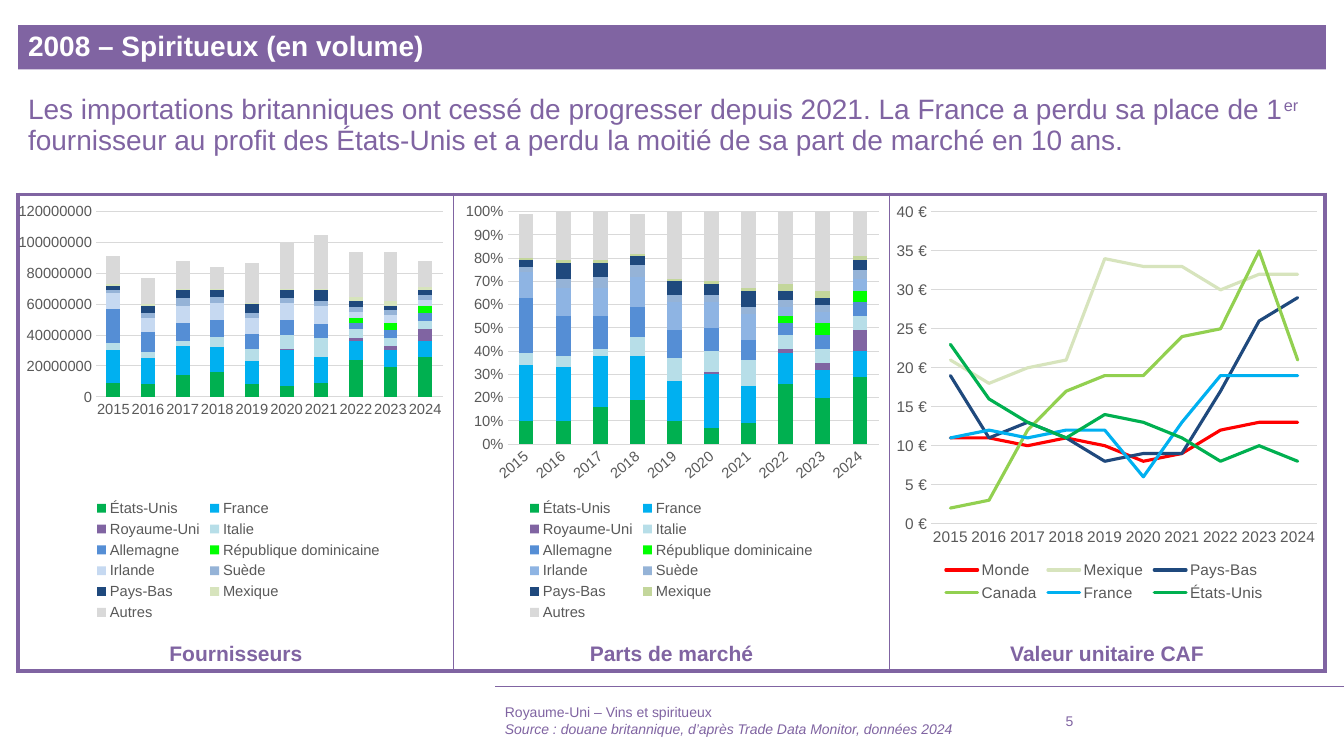
"""Build the slide on British spirits imports: three charts in a framed table."""
from lxml import etree
from pptx import Presentation
from pptx.chart.data import CategoryChartData
from pptx.dml.color import RGBColor
from pptx.enum.chart import XL_CHART_TYPE, XL_LEGEND_POSITION, XL_TICK_MARK
from pptx.enum.shapes import MSO_CONNECTOR, MSO_SHAPE
from pptx.enum.text import MSO_ANCHOR, PP_ALIGN
from pptx.oxml import parse_xml
from pptx.oxml.ns import nsdecls, qn
from pptx.util import Inches, Pt

STACKED, LINE = XL_CHART_TYPE.COLUMN_STACKED, XL_CHART_TYPE.LINE
BOTTOM, NO_TICK = XL_LEGEND_POSITION.BOTTOM, XL_TICK_MARK.NONE
TOP, MIDDLE = MSO_ANCHOR.TOP, MSO_ANCHOR.MIDDLE
LEFT, CENTER = PP_ALIGN.LEFT, PP_ALIGN.CENTER
AUTO_TURN = -1000
COLORS = {
    "purple": "8064A2", "white": "FFFFFF", "text": "595959", "grid": "D9D9D9",
    "green": "00B050", "blue": "00B0F0", "ice": "B7DEE8", "azure": "558ED5",
    "neon": "00FF00", "pale": "C6D9F1", "sky": "8EB4E3", "steel": "95B3D7",
    "navy": "1F497D", "sand": "D7E4BD", "olive": "C3D69B", "red": "FF0000", "lime": "92D050",
}
YEARS = [str(year) for year in range(2015, 2025)]
SUPPLIERS = ["États-Unis", "France", "Royaume-Uni", "Italie", "Allemagne", "République dominicaine",
             "Irlande", "Suède", "Pays-Bas", "Mexique", "Autres"]
SUPPLIER_COLORS = ["green", "blue", "purple", "ice", "azure", "neon",
                   "pale", "steel", "navy", "sand", "grid"]
SHARE_COLORS = ["green", "blue", "purple", "ice", "azure", "neon",
                "sky", "steel", "navy", "olive", "grid"]
VOLUMES_IN_MILLIONS = [
    [9, 8, 14, 16, 8, 7, 9, 24, 19, 26],
    [21, 17, 19, 16, 15, 23, 17, 12, 11, 10],
    [0, 0, 0, 0, 0, 1, 0, 2, 3, 8],
    [5, 4, 3, 7, 8, 9, 12, 6, 5, 5],
    [22, 13, 12, 11, 10, 10, 9, 4, 5, 5],
    [0, 0, 0, 0, 0, 0, 0, 3, 5, 5],
    [10, 9, 11, 11, 10, 11, 12, 4, 5, 4],
    [2, 3, 5, 4, 3, 3, 3, 3, 3, 3],
    [3, 5, 5, 4, 6, 5, 7, 4, 3, 3],
    [1, 1, 1, 1, 1, 1, 1, 3, 3, 2],
    [18, 17, 18, 14, 26, 30, 35, 29, 32, 17],
]
SHARES_IN_PERCENT = [
    [10, 10, 16, 19, 10, 7, 9, 26, 20, 29],
    [24, 23, 22, 19, 17, 23, 16, 13, 12, 11],
    [0, 0, 0, 0, 0, 1, 0, 2, 3, 9],
    [5, 5, 3, 8, 10, 9, 11, 6, 6, 6],
    [24, 17, 14, 13, 12, 10, 9, 5, 6, 6],
    [0, 0, 0, 0, 0, 0, 0, 3, 5, 5],
    [11, 12, 12, 13, 12, 11, 11, 4, 5, 5],
    [2, 4, 5, 5, 3, 3, 3, 3, 3, 4],
    [3, 7, 6, 4, 6, 5, 7, 4, 3, 4],
    [1, 1, 1, 1, 1, 1, 1, 3, 3, 2],
    [19, 22, 21, 17, 29, 31, 33, 31, 34, 19],
]
UNIT_VALUES = [
    [11, 11, 10, 11, 10, 8, 9, 12, 13, 13],
    [21, 18, 20, 21, 34, 33, 33, 30, 32, 32],
    [19, 11, 13, 11, 8, 9, 9, 17, 26, 29],
    [2, 3, 12, 17, 19, 19, 24, 25, 35, 21],
    [11, 12, 11, 12, 12, 6, 13, 19, 19, 19],
    [23, 16, 13, 11, 14, 13, 11, 8, 10, 8],
]
CHARTS = [
    {"type": STACKED, "at": (0.17, 1.93, 4.35, 4.27), "names": SUPPLIERS,
     "values": [[volume * 1000000 for volume in row] for row in VOLUMES_IN_MILLIONS],
     "colors": SUPPLIER_COLORS, "max": 120000000, "unit": 20000000, "format": "General",
     "size": 10.5, "turn": AUTO_TURN, "plot": (0.18, 0.04, 0.79, 0.43),
     "legend": (0.17, 0.7, 0.67, 0.3)},
    {"type": STACKED, "at": (4.52, 1.93, 4.28, 4.27), "names": SUPPLIERS,
     "values": [[share / 100 for share in row] for row in SHARES_IN_PERCENT],
     "colors": SHARE_COLORS, "max": 1, "unit": 0.1, "format": "0%",
     "size": 10.5, "turn": -40, "plot": (0.12, 0.04, 0.86, 0.54), "legend": (0.16, 0.7, 0.68, 0.3)},
    {"type": LINE, "at": (8.8, 1.94, 4.35, 4.07),
     "names": ["Monde", "Mexique", "Pays-Bas", "Canada", "France", "États-Unis"],
     "values": UNIT_VALUES, "colors": ["red", "sand", "navy", "lime", "blue", "green"],
     "max": 40, "unit": 5, "format": '#,##0\\ "€"',
     "size": 11, "turn": AUTO_TURN, "plot": (0.1, 0.04, 0.88, 0.76),
     "legend": (0.12, 0.88, 0.75, 0.12)},
]
TITLE = {"size": Pt(20), "bold": True}
LEAD = {"size": Pt(20)}
CAPTION = {"size": Pt(15), "bold": True}
FOOTER = {"size": Pt(10)}
SOURCE = {"size": Pt(10), "italic": True}
LEAD_START = ("Les importations britanniques ont cessé de progresser depuis 2021. "
              "La France a perdu sa place de 1")
LEAD_END = " fournisseur au profit des États-Unis et a perdu la moitié de sa part de marché en 10 ans."
SOURCE_TEXT = "Source : douane britannique, d’après Trade Data Monitor, données 2024"
TEXTS = [
    ((0.18, 0.25, 12.97, 0.44), MIDDLE, LEFT, 0.9, "white",
     [(["2008 – Spiritueux (en volume)"], TITLE)]),
    ((0.18, 0.9, 12.96, 0.81), TOP, LEFT, 0.9, "purple", [([LEAD_START, "er", LEAD_END], LEAD)]),
    ((4.91, 6.95, 5.43, 0.4), MIDDLE, LEFT, 1.0, "purple",
     [(["Royaume-Uni – Vins et spiritueux"], FOOTER), ([SOURCE_TEXT], SOURCE)]),
    ((10.47, 6.95, 0.99, 0.4), MIDDLE, LEFT, 1.0, "purple", [(["5"], FOOTER)]),
]
for column, caption in enumerate(["Fournisseurs", "Parts de marché", "Valeur unitaire CAF"]):
    TEXTS.append(((0.18 + 4.32 * column, 6.31, 4.32, 0.35), TOP, CENTER, 1.0, "purple",
                  [([caption], CAPTION)]))


def rgb(name):
    return RGBColor.from_string(COLORS[name])


def layout_xml(area, inner):
    target = '<c:layoutTarget val="inner"/>' if inner else ""
    sizes = "".join(f'<c:{key} val="{value}"/>' for key, value in zip("xywh", area))
    modes = '<c:xMode val="edge"/><c:yMode val="edge"/>'
    return parse_xml(f'<c:layout {nsdecls("c")}><c:manualLayout>{target}{modes}{sizes}'
                     '</c:manualLayout></c:layout>')


deck = Presentation()
deck.slide_width, deck.slide_height = Inches(13.33), Inches(7.5)
page = deck.slides.add_slide(deck.slide_layouts[6])

rule = page.shapes.add_connector(MSO_CONNECTOR.STRAIGHT, Inches(13.33), Inches(6.81),
                                 Inches(4.91), Inches(6.81))
rule.line.color.rgb = rgb("purple")
rule.line.width = Pt(0.5)
etree.SubElement(rule._element.spPr, qn("a:effectLst"))

frame = page.shapes.add_table(1, 3, Inches(0.18), Inches(1.93), Inches(12.96), Inches(4.73))
frame.table.first_row = frame.table.horz_banding = False
for column in range(3):
    cell = frame.table.cell(0, column)
    cell.fill.background()
    borders = {"lnL": 3 if column == 0 else 1, "lnR": 3 if column == 2 else 1, "lnT": 3, "lnB": 3}
    for place, (side, width) in enumerate(borders.items()):
        cell._tc.get_or_add_tcPr().insert(place, parse_xml(
            f'<a:{side} {nsdecls("a")} w="{Pt(width)}"><a:solidFill>'
            f'<a:srgbClr val="{COLORS["purple"]}"/></a:solidFill></a:{side}>'))

for area, anchor, align, spacing, color, paragraphs in TEXTS:
    place = [Inches(length) for length in area]
    if color == "white":
        box = page.shapes.add_shape(MSO_SHAPE.RECTANGLE, *place)
        box.shadow.inherit = False
        box.fill.solid()
        box.fill.fore_color.rgb = rgb("purple")
        box.line.fill.background()
    else:
        box = page.shapes.add_textbox(*place)
    box.text_frame.word_wrap = True
    box.text_frame.vertical_anchor = anchor
    for number, (pieces, style) in enumerate(paragraphs):
        para = box.text_frame.add_paragraph() if number else box.text_frame.paragraphs[0]
        para.alignment = align
        para.line_spacing = spacing
        for piece in pieces:
            span = para.add_run()
            span.text = piece
            span.font.name = "Arial"
            span.font.color.rgb = rgb(color)
            for name, value in style.items():
                setattr(span.font, name, value)
            if piece == "er":
                span.font._element.set("baseline", "30000")

for item in CHARTS:
    data = CategoryChartData()
    data.categories = YEARS
    for name, values in zip(item["names"], item["values"]):
        data.add_series(name, values)
    chart = page.shapes.add_chart(item["type"], *[Inches(length) for length in item["at"]], data).chart
    chart.has_title = False
    chart.has_legend = True
    chart.legend.position = BOTTOM
    chart.legend.include_in_layout = False
    years, amounts = chart.category_axis, chart.value_axis
    for font in (chart.font, chart.legend.font, years.tick_labels.font, amounts.tick_labels.font):
        font.name = "Arial"
        font.size = Pt(item["size"])
        font.color.rgb = rgb("text")
    for axis in (years, amounts):
        axis.major_tick_mark = axis.minor_tick_mark = NO_TICK
    years.format.line.color.rgb = amounts.major_gridlines.format.line.color.rgb = rgb("grid")
    years.format.line.width = amounts.major_gridlines.format.line.width = Pt(0.75)
    years._element.find(qn("c:txPr")).find(qn("a:bodyPr")).set("rot", str(item["turn"] * 60000))
    amounts.format.line.fill.background()
    amounts.minimum_scale, amounts.maximum_scale = 0, item["max"]
    amounts.major_unit = item["unit"]
    amounts.tick_labels.number_format = item["format"]
    amounts.tick_labels.number_format_is_linked = False
    plot = chart.plots[0]
    plot.vary_by_categories = False
    if item["type"] == STACKED:
        plot.gap_width, plot.overlap = 150, 100
    for series, color in zip(plot.series, item["colors"]):
        if item["type"] == LINE:
            series.smooth = False
            series.format.line.color.rgb = rgb(color)
            series.format.line.width = Pt(2.25)
            series.format.line._get_or_add_ln().set("cap", "rnd")
        else:
            series.format.fill.solid()
            series.format.fill.fore_color.rgb = rgb(color)
    for owner, area, inner in ((chart._chartSpace.chart.plotArea, item["plot"], True),
                               (chart.legend._element, item["legend"], False)):
        for old in owner.findall(qn("c:layout")):
            owner.remove(old)
        owner.insert(0 if inner else 1, layout_xml(area, inner))

deck.save("out.pptx")
